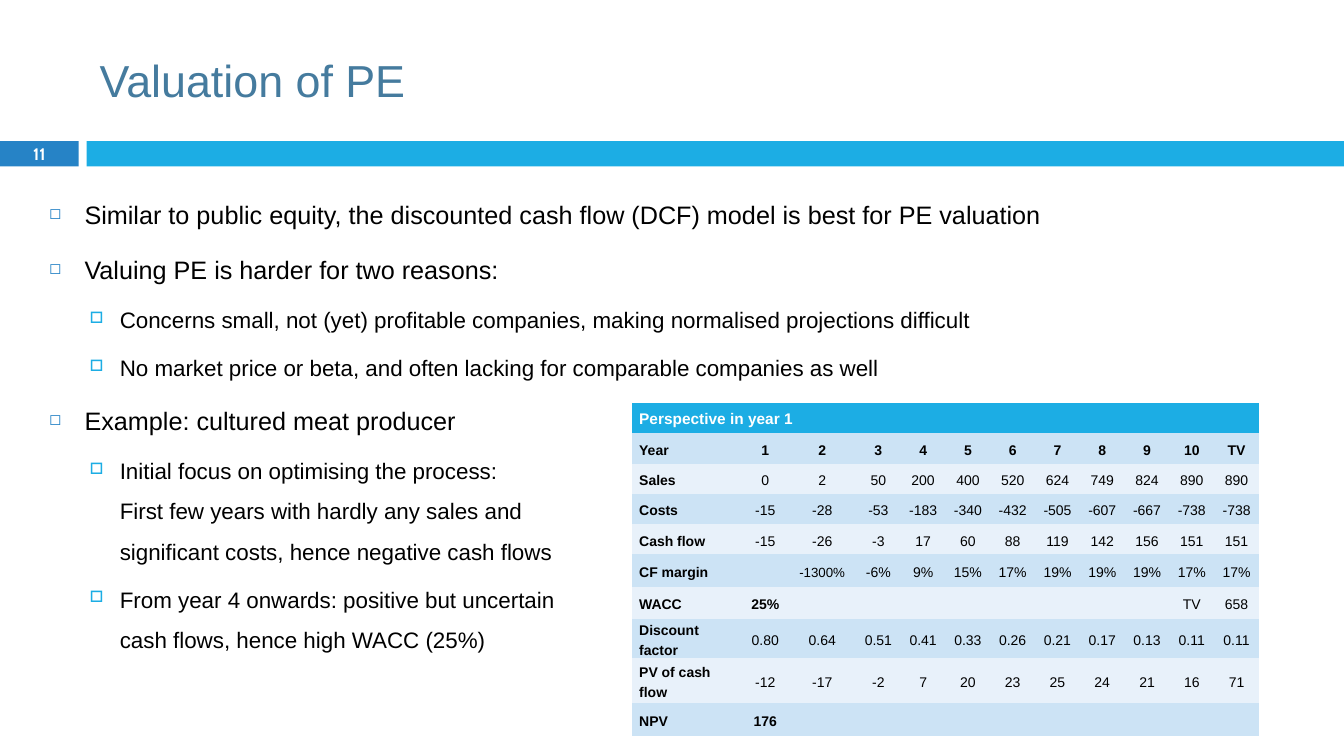
from pptx import Presentation
from pptx import util as u
from pptx.dml.color import RGBColor
from pptx.enum import shapes, text
from pptx.oxml import ns
from lxml import etree

WHITE = RGBColor(0xFF, 0xFF, 0xFF)
BLACK = RGBColor(0, 0, 0)
STEEL = RGBColor(0x45, 0x7B, 0x9E)
BLUE = RGBColor(0x26, 0x83, 0xC6)
SKY = RGBColor(0x1C, 0xAD, 0xE4)
BAND_DARK = RGBColor(0xCC, 0xE3, 0xF5)
BAND_LIGHT = RGBColor(0xE8, 0xF1, 0xFA)
NO_TABLE_STYLE = "{2D5ABB26-0587-4C30-8999-92F81FD0307C}"

TITLE = "Valuation of PE"
PAGE_NUMBER = "11"
BARS = [(0, 0.78, BLUE), (0.86, 12.47, SKY)]

BULLETS = [
    (0, "Similar to public equity, the discounted cash flow (DCF) model is best for PE valuation"),
    (0, "Valuing PE is harder for two reasons:"),
    (1, "Concerns small, not (yet) profitable companies, making normalised projections difficult"),
    (1, "No market price or beta, and often lacking for comparable companies as well"),
    (0, "Example: cultured meat producer"),
    (1, "Initial focus on optimising the process:\nFirst few years with hardly any sales and \n"
        "significant costs, hence negative cash flows"),
    (1, "From year 4 onwards: positive but uncertain\ncash flows, hence high WACC (25%)"),
]
LEVELS = [
    {"size": 18, "before": 7, "left": 0.35, "hang": 0.35, "char": "◻", "color": BLUE, "percent": 60},
    {"size": 16, "before": 5.5, "left": 0.7, "hang": 0.3, "char": "□", "color": SKY, "percent": 70},
]

TABLE_TITLE = "Perspective in year 1"
ROWS = [
    ("Year", ["1", "2", "3", "4", "5", "6", "7", "8", "9", "10", "TV"]),
    ("Sales", ["0", "2", "50", "200", "400", "520", "624", "749", "824", "890", "890"]),
    ("Costs", ["-15", "-28", "-53", "-183", "-340", "-432", "-505", "-607", "-667", "-738", "-738"]),
    ("Cash flow", ["-15", "-26", "-3", "17", "60", "88", "119", "142", "156", "151", "151"]),
    ("CF margin", ["", "-1300%", "-6%", "9%", "15%", "17%", "19%", "19%", "19%", "17%", "17%"]),
    ("WACC", ["25%"] + [""] * 8 + ["TV", "658"]),
    ("Discount factor", ["0.80", "0.64", "0.51", "0.41", "0.33", "0.26", "0.21", "0.17", "0.13", "0.11", "0.11"]),
    ("PV of cash flow", ["-12", "-17", "-2", "7", "20", "23", "25", "24", "21", "16", "71"]),
    ("NPV", ["176"] + [""] * 10),
]
BOLD_VALUES = {"25%", "176"}
TABLE_WIDTH = 6.22
FIRST_WIDTHS = [1.09, 0.46, 0.67]
ROW_HEIGHTS = [0.3] * 5 + [0.32, 0.32, 0.38, 0.45, 0.32]


def set_all(target, values):
    for name, value in values.items():
        setattr(target, name, value)


def write(paragraph, content, size, color, font="Arial", bold=False, **layout):
    paragraph.text = content
    for run in paragraph.runs:
        set_all(run.font, {"name": font, "size": u.Pt(size), "bold": bold})
        run.font.color.rgb = color
    for line_break in paragraph._p.findall(ns.qn("a:br")):
        etree.SubElement(line_break, ns.qn("a:rPr"), sz=str(size * 100))
    set_all(paragraph, layout)


def add_text_frame(slide, left, top, width, height, anchor):
    box = slide.shapes.add_textbox(*map(u.Inches, (left, top, width, height)))
    set_all(box.text_frame, {"word_wrap": True, "vertical_anchor": anchor})
    return box.text_frame


def add_bullet(paragraph, level):
    properties = paragraph._p.get_or_add_pPr()
    properties.set("marL", str(u.Inches(level["left"])))
    properties.set("indent", str(-u.Inches(level["hang"])))
    color = etree.SubElement(properties, ns.qn("a:buClr"))
    etree.SubElement(color, ns.qn("a:srgbClr"), val=str(level["color"]))
    etree.SubElement(properties, ns.qn("a:buSzPct"), val=str(level["percent"] * 1000))
    etree.SubElement(properties, ns.qn("a:buChar"), char=level["char"])


def add_bars(slide):
    for left, width, color in BARS:
        bar = slide.shapes.add_shape(
            shapes.MSO_SHAPE.RECTANGLE, *map(u.Inches, (left, 1.4, width, 0.25)))
        bar.shadow.inherit = False
        bar.fill.solid()
        bar.fill.fore_color.rgb = color
        bar.line.fill.background()


def add_bullets(slide):
    frame = add_text_frame(slide, 0.39, 1.78, 11.36, 5.39, text.MSO_ANCHOR.TOP)
    for index, (depth, content) in enumerate(BULLETS):
        paragraph = frame.add_paragraph() if index else frame.paragraphs[0]
        level = LEVELS[depth]
        write(paragraph, content, level["size"], BLACK, level=depth,
              line_spacing=1.5, space_before=u.Pt(level["before"]))
        add_bullet(paragraph, level)


def fill_cell(cell, content, fill, size, color, bold, alignment):
    set_all(cell, {"margin_left": u.Inches(0.07), "margin_right": u.Inches(0.07),
                   "margin_top": 0, "margin_bottom": 0,
                   "vertical_anchor": text.MSO_ANCHOR.MIDDLE})
    cell.fill.solid()
    cell.fill.fore_color.rgb = fill
    write(cell.text_frame.paragraphs[0], content, size, color, bold=bold, alignment=alignment,
          line_spacing=u.Pt(14), space_before=u.Pt(1), space_after=u.Pt(1))


def add_valuation_table(slide):
    column_count = len(ROWS[0][1]) + 1
    other_count = column_count - len(FIRST_WIDTHS)
    other_width = (TABLE_WIDTH - sum(FIRST_WIDTHS)) / other_count
    frame = slide.shapes.add_table(
        len(ROWS) + 1, column_count,
        *map(u.Inches, (6.27, 4, TABLE_WIDTH, sum(ROW_HEIGHTS))))
    table = frame.table
    set_all(table, {"first_row": False, "horz_banding": False})
    table._tbl.tblPr.find(ns.qn("a:tableStyleId")).text = NO_TABLE_STYLE
    for column, width in zip(table.columns, FIRST_WIDTHS + [other_width] * other_count):
        column.width = u.Inches(width)
    for row, height in zip(table.rows, ROW_HEIGHTS):
        row.height = u.Inches(height)

    table.cell(0, 0).merge(table.cell(0, column_count - 1))
    fill_cell(table.cell(0, 0), TABLE_TITLE, SKY, 11, WHITE, True, text.PP_ALIGN.LEFT)
    for row_index, (label, values) in enumerate(ROWS, start=1):
        band = BAND_DARK if row_index % 2 else BAND_LIGHT
        for column_index, content in enumerate([label] + values):
            bold = row_index == 1 or column_index == 0 or content in BOLD_VALUES
            alignment = text.PP_ALIGN.CENTER if column_index else text.PP_ALIGN.LEFT
            size = 9.5 if content == "-1300%" else 10
            fill_cell(table.cell(row_index, column_index), content, band, size, BLACK, bold, alignment)


def main():
    presentation = Presentation()
    set_all(presentation, {"slide_width": u.Inches(13.33), "slide_height": u.Inches(7.5)})
    slide = presentation.slides.add_slide(presentation.slide_layouts[6])
    add_bars(slide)
    title = add_text_frame(slide, 0.89, 0.25, 11.89, 1.08, text.MSO_ANCHOR.MIDDLE)
    write(title.paragraphs[0], TITLE, 32, STEEL)
    number = add_text_frame(slide, 0, 1.39, 0.78, 0.27, text.MSO_ANCHOR.MIDDLE)
    write(number.paragraphs[0], PAGE_NUMBER, 11.9, WHITE, font="Cabin", bold=True,
          alignment=text.PP_ALIGN.CENTER)
    add_bullets(slide)
    add_valuation_table(slide)
    presentation.save("out.pptx")


if __name__ == "__main__":
    main()
